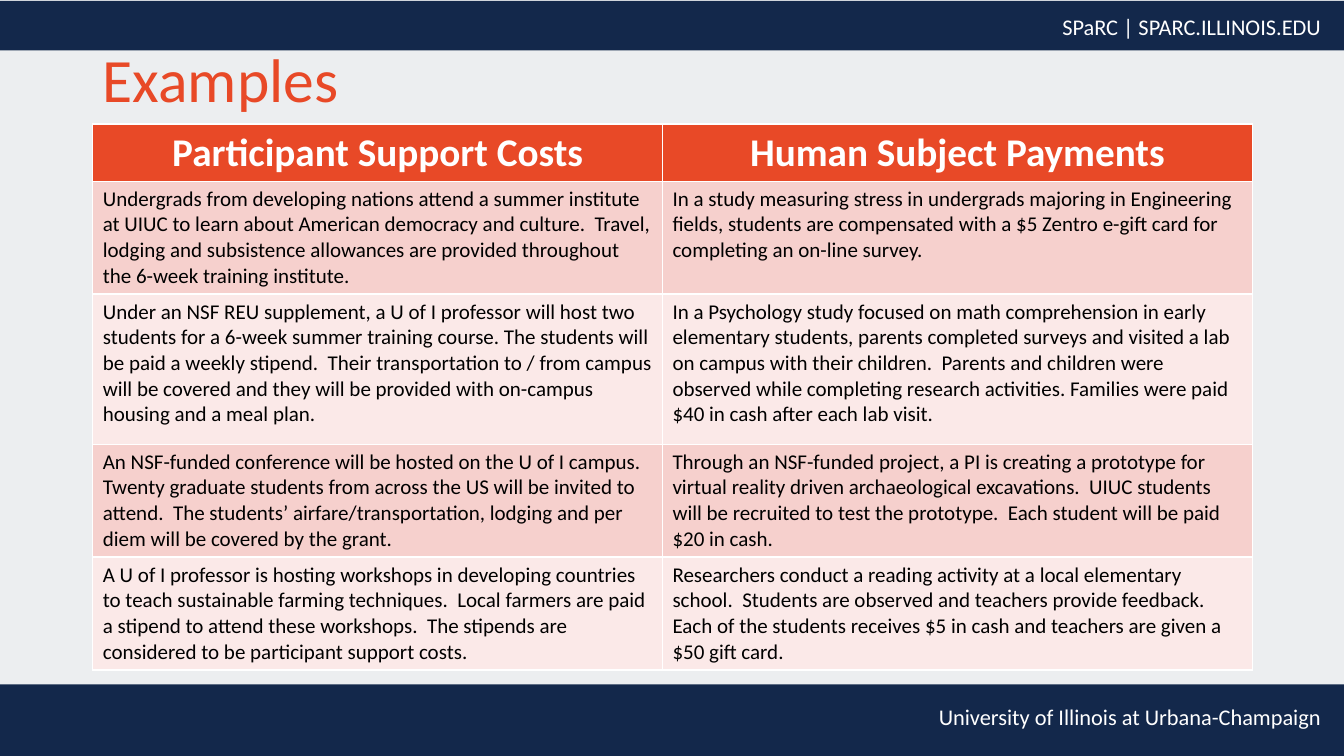
import pptx
import pptx.dml.color
import pptx.enum.shapes
import pptx.enum.text
import pptx.util

Inches = pptx.util.Inches
Pt = pptx.util.Pt
ALIGN = pptx.enum.text.PP_ALIGN
ANCHOR = pptx.enum.text.MSO_ANCHOR

FONT = "Calibri"
COLORS = {
    "background": "ECEEF0",
    "navy": "13284B",
    "orange": "E84927",
    "band_dark": "F6D0CD",
    "band_light": "FBE9E8",
    "white": "FFFFFF",
    "black": "000000",
}

TITLE = "Examples"
# Bar top, bar height, label top, label
BARS = [
    (6.79, 0.71, 6.93, "University of Illinois at Urbana-Champaign"),
    (0.01, 0.49, 0.08, "SPaRC | SPARC.ILLINOIS.EDU"),
]
HEADERS = ("Participant Support Costs", "Human Subject Payments")
EXAMPLES = [
    (
        "Undergrads from developing nations attend a summer institute at UIUC to learn about "
        "American democracy and culture.  Travel, lodging and subsistence allowances are "
        "provided throughout the 6-week training institute.",
        "In a study measuring stress in undergrads majoring in Engineering fields, students are "
        "compensated with a $5 Zentro e-gift card for completing an on-line survey.",
    ),
    (
        "Under an NSF REU supplement, a U of I professor will host two students for a 6-week "
        "summer training course. The students will be paid a weekly stipend.  Their "
        "transportation to / from campus will be covered and they will be provided with "
        "on-campus housing and a meal plan.",
        "In a Psychology study focused on math comprehension in early elementary students, "
        "parents completed surveys and visited a lab on campus with their children.  Parents "
        "and children were observed while completing research activities. Families were paid "
        "$40 in cash after each lab visit.",
    ),
    (
        "An NSF-funded conference will be hosted on the U of I campus.  Twenty graduate "
        "students from across the US will be invited to attend.  The students’ "
        "airfare/transportation, lodging and per diem will be covered by the grant.",
        "Through an NSF-funded project, a PI is creating a prototype for virtual reality driven "
        "archaeological excavations.  UIUC students will be recruited to test the prototype.  "
        "Each student will be paid $20 in cash.",
    ),
    (
        "A U of I professor is hosting workshops in developing countries to teach sustainable "
        "farming techniques.  Local farmers are paid a stipend to attend these workshops.  The "
        "stipends are considered to be participant support costs.",
        "Researchers conduct a reading activity at a local elementary school.  Students are "
        "observed and teachers provide feedback.  Each of the students receives $5 in cash and "
        "teachers are given a $50 gift card.",
    ),
]
SLIDE_W, SLIDE_H = 13.33, 7.5
LEFT, TABLE_TOP = 0.92, 1.23
COL_WIDTHS = (5.65, 5.85)
ROW_HEIGHTS = (0.56, 1.12, 1.49, 1.12, 1.12)


def rgb(name):
    return pptx.dml.color.RGBColor.from_string(COLORS[name])


def set_fill(item, color):
    item.fill.solid()
    item.fill.fore_color.rgb = rgb(color)


def write(tf, text, size, color, align=ALIGN.LEFT, bold=False):
    tf.word_wrap = True
    p = tf.paragraphs[0]
    p.text = text
    p.alignment = align
    font = p.runs[0].font
    font.name, font.size, font.bold = FONT, Pt(size), bold
    font.color.rgb = rgb(color)
    return p


def add_bar(slide, top, height, label_top, label):
    sp = slide.shapes.add_shape(
        pptx.enum.shapes.MSO_SHAPE.RECTANGLE,
        0, Inches(top), Inches(SLIDE_W), Inches(height))
    sp.shadow.inherit = False
    set_fill(sp, "navy")
    sp.line.fill.background()
    box = slide.shapes.add_textbox(Inches(5.65), Inches(label_top), Inches(7.55), Inches(0.37))
    write(box.text_frame, label, 16, "white", ALIGN.RIGHT)


def add_title(slide):
    box = slide.shapes.add_textbox(Inches(LEFT), Inches(0.4), Inches(11.5), Inches(0.83))
    box.text_frame.vertical_anchor = ANCHOR.MIDDLE
    write(box.text_frame, TITLE, 44, "orange").line_spacing = 0.9


def add_examples_table(slide):
    rows = [HEADERS] + EXAMPLES
    table = slide.shapes.add_table(
        len(rows), len(HEADERS), Inches(LEFT), Inches(TABLE_TOP),
        Inches(sum(COL_WIDTHS)), Inches(sum(ROW_HEIGHTS))).table
    for column, width in zip(table.columns, COL_WIDTHS):
        column.width = Inches(width)
    for i, (row, height, texts) in enumerate(zip(table.rows, ROW_HEIGHTS, rows)):
        row.height = Inches(height)
        for cell, text in zip(row.cells, texts):
            if i == 0:
                set_fill(cell, "orange")
                write(cell.text_frame, text, 28, "white", ALIGN.CENTER, bold=True)
            else:
                set_fill(cell, "band_dark" if i % 2 else "band_light")
                write(cell.text_frame, text, 15, "black")


def main():
    prs = pptx.Presentation()
    prs.slide_width, prs.slide_height = Inches(SLIDE_W), Inches(SLIDE_H)
    slide = prs.slides.add_slide(prs.slide_layouts[6])
    set_fill(slide.background, "background")
    for bar in BARS:
        add_bar(slide, *bar)
    add_title(slide)
    add_examples_table(slide)
    prs.save("out.pptx")


if __name__ == "__main__":
    main()
